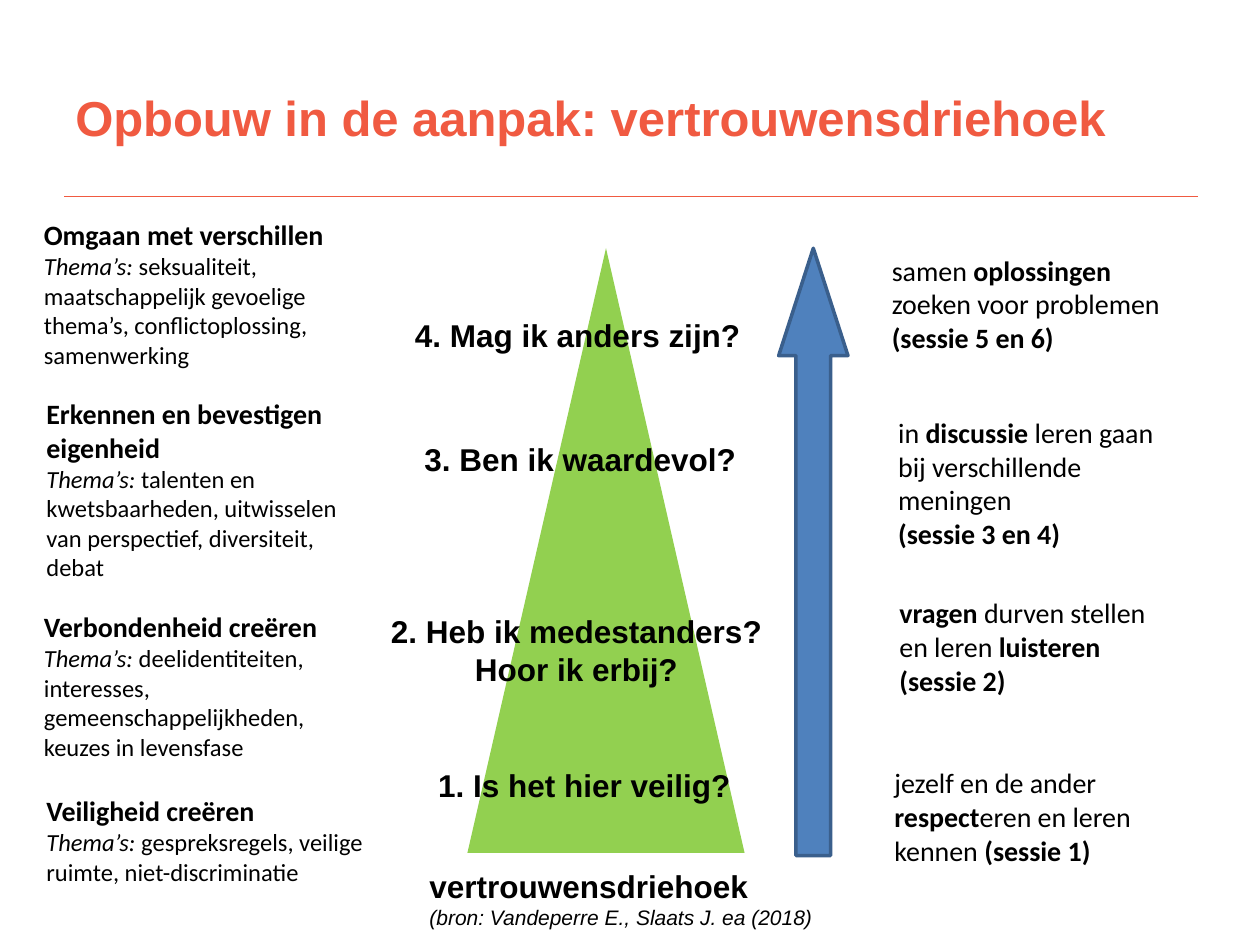
from lxml.etree import SubElement
from pptx import Presentation
from pptx.dml.color import RGBColor
from pptx.enum.shapes import MSO_CONNECTOR as Connector, MSO_SHAPE as Shape
from pptx.enum.text import MSO_ANCHOR as Anchor, PP_ALIGN as Align
from pptx.oxml.ns import qn
from pptx.util import Inches, Pt

COLORS = {"accent": "F05A41", "text": "000000", "triangle": "92D050",
          "arrow": "4F81BD", "arrow_edge": "3A5F8C"}
WIDTH, HEIGHT = Inches(10), Inches(7.5)

# All places are (left, top, width, height) in percent of the slide.
TITLE = "Opbouw in de aanpak: vertrouwensdriehoek"
TITLE_PLACE = (5, 4, 90, 16.67)
RULE = (5.1, 95.1, 20.8)  # left, right, height on the slide
TRIANGLE_PLACE = (37.1, 26.27, 22, 64)
ARROW_PLACE = (61.8, 26.27, 5.5, 64.27)

THEME_WIDTH = 27.2
THEMES = [  # left, top, height, heading, themes
    (2.5, 22.4, 17.47, "Omgaan met verschillen",
     "seksualiteit, maatschappelijk gevoelige thema’s, conflictoplossing, samenwerking"),
    (2.7, 41.33, 21.07, "Erkennen en bevestigen eigenheid",
     "talenten en kwetsbaarheden, uitwisselen van perspectief, diversiteit, debat"),
    (2.5, 63.87, 17.47, "Verbondenheid creëren",
     "deelidentiteiten, interesses, gemeenschappelijkheden, keuzes in levensfase"),
    (2.7, 83.33, 11.2, "Veiligheid creëren",
     "gespreksregels, veilige ruimte, niet-discriminatie"),
]

QUESTIONS = [  # place, alignment, question
    ((29.9, 32.8, 31.9, 5.33), Align.CENTER, "4. Mag ik anders zijn?"),
    ((30.1, 45.87, 31.9, 5.33), Align.CENTER, "3. Ben ik waardevol?"),
    ((29.8, 64.13, 31.9, 9.47), Align.CENTER, "2. Heb ik medestanders? Hoor ik erbij?"),
    ((33.8, 80.4, 27.6, 5.33), Align.LEFT, "1. Is het hier veilig?"),
]

CAPTION_PLACE = (33.1, 91.07, 33.5, 8.13)
CAPTION = [[("vertrouwensdriehoek", 18, "b")],
           [("(bron: Vandeperre E., Slaats J. ea (2018)", 12, "i")]]

SKILLS = [  # place, paragraphs of (text, style)
    ((69.8, 26.13, 23.3, 15.73),
     [[("samen ", ""), ("oplossingen ", "b"), ("zoeken voor problemen", "")],
      [("(sessie 5 en 6)", "b")]]),
    ((70.3, 43.33, 23.3, 15.73),
     [[("in ", ""), ("discussie", "b"), (" leren gaan bij verschillende meningen", "")],
      [("(sessie 3 en 4)", "b")]]),
    ((70.4, 62.4, 23.3, 12.13),
     [[("vragen", "b"), (" durven stellen en leren ", ""), ("luisteren (sessie 2)", "b")]]),
    ((70, 80.4, 27.2, 12.13),
     [[("jezelf en de ander ", ""), ("respect", "b"), ("eren en leren kennen ", ""),
       ("(sessie 1)", "b")]]),
]


def rgb(name):
    return RGBColor.from_string(COLORS[name])


def across(share):
    return round(WIDTH * share / 100)


def down(share):
    return round(HEIGHT * share / 100)


def position(place):
    left, top, width, height = place
    return across(left), down(top), across(width), down(height)


def add_text(page, place, paragraphs, font, color="text", align=Align.LEFT, anchor=Anchor.TOP):
    """Add a wrapping box; each paragraph is a list of (text, size, style)."""
    box = page.shapes.add_textbox(*position(place))
    frame = box.text_frame
    frame.word_wrap = True
    frame.vertical_anchor = anchor
    for index, runs in enumerate(paragraphs):
        para = frame.add_paragraph() if index else frame.paragraphs[0]
        para.alignment = align
        for text, size, style in runs:
            span = para.add_run()
            span.text = text
            span.font.name = font
            span.font.size = Pt(size)
            span.font.bold = style == "b"
            span.font.italic = style == "i"
            span.font.color.rgb = rgb(color)


def add_figure(page, kind, place, fill):
    figure = page.shapes.add_shape(kind, *position(place))
    figure.shadow.inherit = False
    figure.fill.solid()
    figure.fill.fore_color.rgb = rgb(fill)
    figure.line.fill.background()
    return figure


def add_rule(page):
    left, right, top = RULE
    rule = page.shapes.add_connector(
        Connector.STRAIGHT, across(left), down(top), across(right), down(top))
    rule.line.color.rgb = rgb("accent")
    rule.line.width = Pt(0.5)
    SubElement(rule._element.spPr, qn("a:effectLst"))


def main():
    deck = Presentation()
    deck.slide_width, deck.slide_height = WIDTH, HEIGHT
    page = deck.slides.add_slide(deck.slide_layouts[6])

    add_rule(page)
    add_text(page, TITLE_PLACE, [[(TITLE, 28, "b")]], "Arial", "accent", anchor=Anchor.MIDDLE)

    add_figure(page, Shape.ISOSCELES_TRIANGLE, TRIANGLE_PLACE, "triangle")
    arrow = add_figure(page, Shape.UP_ARROW, ARROW_PLACE, "arrow")
    arrow.adjustments[0], arrow.adjustments[1] = 0.5, 1.55
    arrow.line.color.rgb = rgb("arrow_edge")
    arrow.line.width = Pt(2)

    for place, align, question in QUESTIONS:
        add_text(page, place, [[(question, 18, "b")]], "Arial", align=align)
    add_text(page, CAPTION_PLACE, CAPTION, "Arial")

    for left, top, height, heading, themes in THEMES:
        add_text(page, (left, top, THEME_WIDTH, height),
                 [[(heading, 16, "b")], [("Thema’s:", 14, "i"), (" " + themes, 14, "")]],
                 "Calibri")

    for place, paragraphs in SKILLS:
        sized = [[(text, 16, style) for text, style in runs] for runs in paragraphs]
        add_text(page, place, sized, "Calibri")

    deck.save("out.pptx")


if __name__ == "__main__":
    main()
